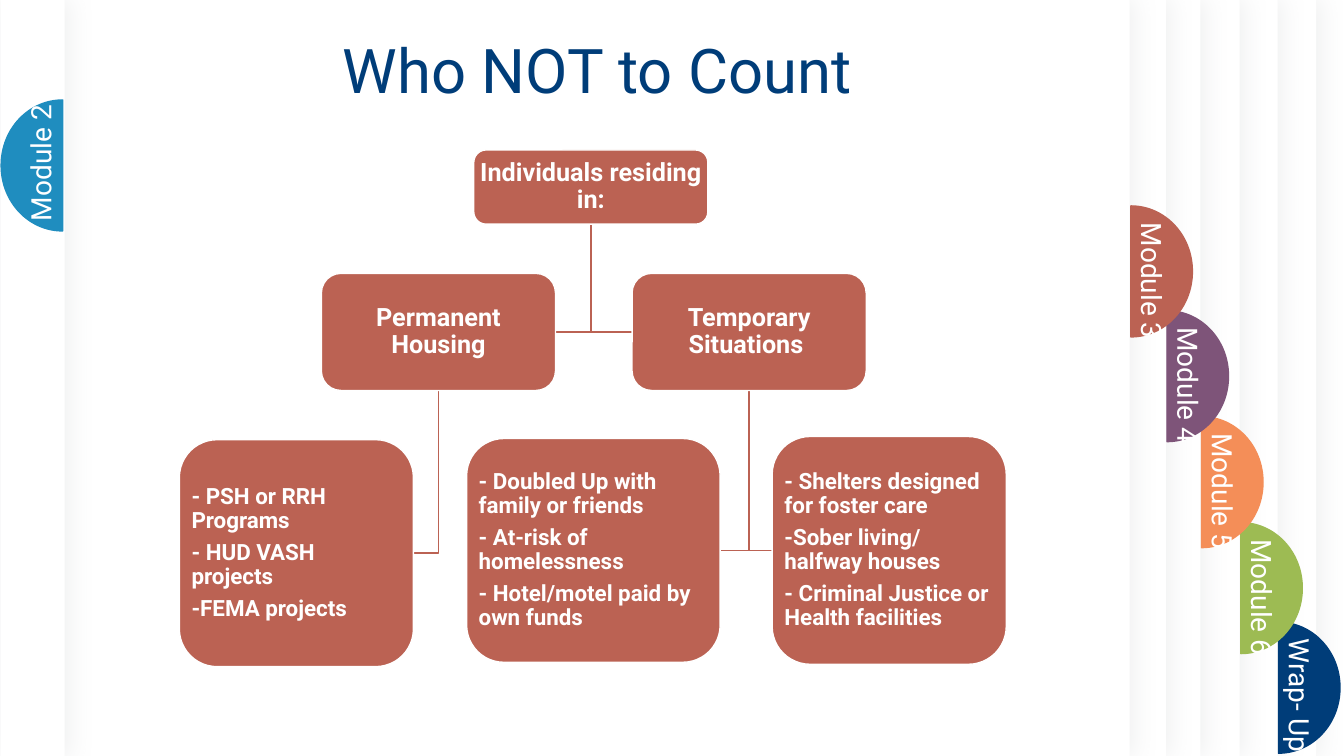
from lxml.etree import SubElement
from pptx import Presentation
from pptx.dml.color import RGBColor
from pptx.enum.shapes import MSO_SHAPE
from pptx.enum.text import MSO_ANCHOR, MSO_AUTO_SIZE, PP_ALIGN
from pptx.oxml.ns import qn
from pptx.util import Cm, Pt

WHITE = RGBColor(0xFF, 0xFF, 0xFF)
NAVY = RGBColor(0x00, 0x3D, 0x79)
GREEN = RGBColor(0x9D, 0xBB, 0x53)
ORANGE = RGBColor(0xF4, 0x8E, 0x58)
PURPLE = RGBColor(0x7E, 0x54, 0x79)
RUST = RGBColor(0xBB, 0x62, 0x53)
BLUE = RGBColor(0x1F, 0x8D, 0xBF)
SHADOW = RGBColor(0xD3, 0xD5, 0xD6)
FONT = "Roboto"


def add_outline(points, close):
    """Draw a freeform through points given in centimetres."""
    corners = [(Cm(x), Cm(y)) for x, y in points]
    builder = s.shapes.build_freeform(*corners[0])
    builder.add_line_segments(corners[1:], close=close)
    sp = builder.convert_to_shape()
    sp.shadow.inherit = False
    sp.line.width = Pt(1)
    return sp


def set_font(p, size, color, bold=False):
    p.font.name = FONT
    p.font.size = Pt(size)
    p.font.bold = bold
    p.font.color.rgb = color


prs = Presentation()
prs.slide_width, prs.slide_height = Cm(33.87), Cm(19.05)
s = prs.slides.add_slide(prs.slide_layouts[5])

# Stacked pages, back to front
pages = [(6.53, 26.64), (5.56, 26.64), (4.6, 26.64), (3.61, 26.64),
         (2.74, 26.64), (1.57, 26.9), (0.03, 1.6)]
for left, width in pages:
    sp = s.shapes.add_shape(MSO_SHAPE.RECTANGLE, Cm(left), 0, Cm(width), prs.slide_height)
    sp.fill.solid()
    sp.fill.fore_color.rgb = WHITE
    sp.line.fill.background()
    sp.shadow.inherit = False
    effects = sp.element.spPr.find(qn("a:effectLst"))
    shadow = SubElement(effects, qn("a:outerShdw"), blurRad=str(Pt(17)),
                        dist=str(Pt(3)), dir="0", algn="l", rotWithShape="0")
    color = SubElement(shadow, qn("a:srgbClr"), val=str(SHADOW))
    SubElement(color, qn("a:alpha"), val="35000")

# Half-round module tabs: label, flat edge, top, colour, side they bulge to
TAB_W, TAB_H = 1.55, 3.3
LABEL_W, LABEL_H = 1.37, 4.06
# Flat edge, then two Bézier quarters, as fractions of the tab's width and height
HALF_ROUND = [(0, 0), (0, 1), (0.55, 1), (1, 0.78), (1, 0.5), (1, 0.22), (0.55, 0), (0, 0)]
tabs = [("Wrap- Up", 32.22, 15.68, NAVY, 1), ("Module 6", 31.27, 13.17, GREEN, 1),
        ("Module 5", 30.28, 10.5, ORANGE, 1), ("Module 4", 29.41, 7.83, PURPLE, 1),
        ("Module 3", 28.5, 5.19, RUST, 1), ("Module 2", 1.58, 2.52, BLUE, -1)]
for label, edge, top, color, side in tabs:
    outline = [(edge + side * TAB_W * x, top + TAB_H * y) for x, y in HALF_ROUND]
    sp = add_outline(outline, close=True)
    quarters = sp.element.findall(".//" + qn("a:lnTo"))[1:]
    for i in (0, 3):
        curve = quarters[i].makeelement(qn("a:cubicBezTo"))
        quarters[i].addprevious(curve)
        for segment in quarters[i:i + 3]:
            curve.append(segment[0])
            segment.getparent().remove(segment)
    sp.fill.solid()
    sp.fill.fore_color.rgb = color
    sp.line.color.rgb = color

    if side > 0:
        left, label_top = edge - 0.28, top + 0.17
    else:
        left, label_top = edge + 0.25 - LABEL_W, top + TAB_H - LABEL_H
    box = s.shapes.add_textbox(Cm(left), Cm(label_top), Cm(LABEL_W), Cm(LABEL_H))
    box.rotation = 0 if side > 0 else 180
    tf = box.text_frame
    tf.word_wrap = True
    tf.auto_size = MSO_AUTO_SIZE.SHAPE_TO_FIT_TEXT
    tf.text = label
    set_font(tf.paragraphs[0], 20, WHITE)
    box.element.txBody.bodyPr.set("vert", "vert")

# Title, lifted above the pages
title = s.shapes.title
title.element.getparent().append(title.element)
title.left, title.top, title.width, title.height = Cm(1.62), Cm(0.01), Cm(26.87), Cm(3.7)
tf = title.text_frame
tf.text = "Who NOT to Count"
tf.auto_size = MSO_AUTO_SIZE.NONE
tf.vertical_anchor = MSO_ANCHOR.MIDDLE
p = tf.paragraphs[0]
p.alignment = PP_ALIGN.CENTER
p.line_spacing = 0.9
set_font(p, 44, NAVY)

# Chart boxes: parent, left, top, width, height, paragraphs
boxes = {
    "root": (None, 11.94, 3.78, 5.9, 1.87, ["Individuals residing in:"]),
    "permanent": ("root", 8.1, 6.89, 5.9, 2.95, ["Permanent Housing"]),
    "programs": ("permanent", 4.52, 11.08, 5.9, 5.72,
                 ["- PSH or RRH Programs", "- HUD VASH projects", "-FEMA projects"]),
    "temporary": ("root", 15.93, 6.89, 5.9, 2.95, ["Temporary Situations "]),
    "housed": ("temporary", 11.76, 11.05, 6.39, 5.64,
               ["- Doubled Up with family or friends", "- At-risk of homelessness",
                "- Hotel/motel paid by own funds"]),
    "facilities": ("temporary", 19.46, 11, 5.9, 5.74,
                   ["- Shelters designed for foster care",
                    "-Sober living/ halfway houses",
                    "- Criminal Justice or Health facilities"]),
}

# Elbow lines from the bottom of each parent to the near side of its child
for parent, left, top, width, height, _ in boxes.values():
    if parent is None:
        continue
    _, px, py, pw, ph, _ = boxes[parent]
    stem = px + pw / 2
    side = left if left > stem else left + width
    middle = top + height / 2
    sp = add_outline([(stem, py + ph), (stem, middle), (side, middle)], close=False)
    sp.fill.background()
    sp.line.color.rgb = RUST

for _, left, top, width, height, lines in boxes.values():
    sp = s.shapes.add_shape(MSO_SHAPE.ROUNDED_RECTANGLE, Cm(left), Cm(top),
                            Cm(width), Cm(height))
    sp.shadow.inherit = False
    sp.fill.solid()
    sp.fill.fore_color.rgb = RUST
    sp.line.color.rgb = WHITE
    sp.line.width = Pt(1)
    tf = sp.text_frame
    tf.word_wrap = True
    tf.vertical_anchor = MSO_ANCHOR.MIDDLE
    tf.margin_left = tf.margin_right = tf.margin_top = tf.margin_bottom = Cm(0.03)
    tf.text = "\n".join(lines)
    is_list = len(lines) > 1
    size = 16 if is_list else 18
    for p in tf.paragraphs:
        p.alignment = PP_ALIGN.LEFT if is_list else PP_ALIGN.CENTER
        p.line_spacing = 0.9
        p.space_after = Pt(0.35 * size)
        set_font(p, size, WHITE, bold=True)

prs.save("out.pptx")
